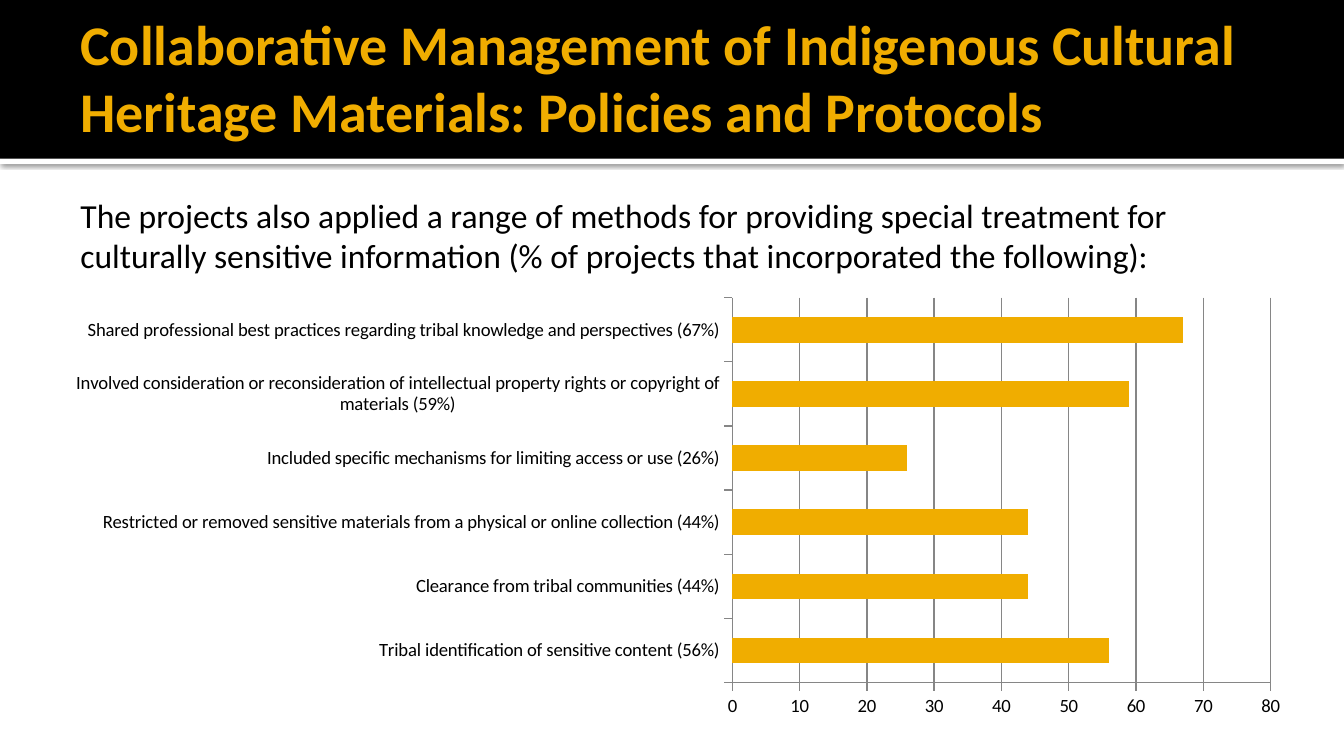
"""Builds a slide with a banner title, an introduction and a bar chart of methods."""
from lxml import etree
from pptx import Presentation
from pptx.chart.data import CategoryChartData
from pptx.dml.color import RGBColor
from pptx.enum.chart import XL_CHART_TYPE as ChartType, XL_TICK_MARK as TickMark
from pptx.enum.shapes import MSO_SHAPE as Shape
from pptx.enum.text import MSO_ANCHOR as Anchor
from pptx.oxml import parse_xml
from pptx.oxml.ns import nsdecls
from pptx.util import Inches, Pt

BLACK = RGBColor(0x00, 0x00, 0x00)
WHITE = RGBColor(0xFF, 0xFF, 0xFF)
GOLD = RGBColor(0xF0, 0xAD, 0x00)
GRAY = RGBColor(0x86, 0x86, 0x86)

TITLE = "Collaborative Management of Indigenous Cultural Heritage Materials: Policies and Protocols"
INTRODUCTION = (
    "The projects also applied a range of methods for providing special treatment for "
    "culturally sensitive information (% of projects that incorporated the following):"
)
METHODS = {
    "Tribal identification of sensitive content (56%)": 56,
    "Clearance from tribal communities (44%)": 44,
    "Restricted or removed sensitive materials from a physical or online collection (44%)": 44,
    "Included specific mechanisms for limiting access or use (26%)": 26,
    "Involved consideration or reconsideration of intellectual property rights "
    "or copyright of materials (59%)": 59,
    "Shared professional best practices regarding tribal knowledge and perspectives (67%)": 67,
}


class SlideBuilder:
    """Holds the style and the current slide."""

    font_name = "Calibri"

    def __init__(self, slide):
        self.slide = slide

    def band(self, left, top, width, height, color):
        shape = self.slide.shapes.add_shape(
            Shape.RECTANGLE, Inches(left), Inches(top), Inches(width), Inches(height))
        shape.shadow.inherit = False
        shape.fill.solid()
        shape.fill.fore_color.rgb = color
        shape.line.fill.background()
        return shape

    def drop_shadow(self, shape, blur, distance, opacity):
        effects = shape.element.spPr.find("{*}effectLst")
        shadow = parse_xml(
            f'<a:outerShdw {nsdecls("a")} blurRad="{Pt(blur)}" dist="{Pt(distance)}" '
            f'dir="5400000" algn="t" rotWithShape="0"/>')
        color = etree.SubElement(shadow, f"{{{shadow.nsmap['a']}}}srgbClr", val=str(BLACK))
        etree.SubElement(color, f"{{{shadow.nsmap['a']}}}alpha", val=str(opacity * 1000))
        effects.append(shadow)

    def text(self, left, top, width, height, words, size, color, bold=False, anchor=Anchor.TOP):
        box = self.slide.shapes.add_textbox(
            Inches(left), Inches(top), Inches(width), Inches(height))
        frame = box.text_frame
        frame.word_wrap = True
        frame.vertical_anchor = anchor
        frame.text = words
        font = frame.paragraphs[0].runs[0].font
        font.name, font.size, font.bold = self.font_name, Pt(size), bold
        font.color.rgb = color
        return frame

    def bar_chart(self, left, top, width, height, values, size, color):
        data = CategoryChartData()
        data.categories = list(values)
        data.add_series("Series 1", list(values.values()))
        chart = self.slide.shapes.add_chart(
            ChartType.BAR_CLUSTERED, Inches(left), Inches(top),
            Inches(width), Inches(height), data).chart
        chart.has_legend = chart.has_title = False
        chart.font.name, chart.font.size = self.font_name, Pt(size)
        chart.font.color.rgb = BLACK
        plot = chart.plots[0]
        plot.gap_width = 150
        plot.vary_by_categories = False
        fill = plot.series[0].format.fill
        fill.solid()
        fill.fore_color.rgb = color
        value_axis = chart.value_axis
        value_axis.has_major_gridlines = True
        for axis in (chart.category_axis, value_axis):
            axis.major_tick_mark = TickMark.OUTSIDE
        for part in (chart.category_axis, value_axis, value_axis.major_gridlines):
            part.format.line.color.rgb = GRAY


def main():
    presentation = Presentation()
    presentation.slide_width = Inches(10)
    presentation.slide_height = presentation.slide_width * 9 // 16
    builder = SlideBuilder(presentation.slides.add_slide(presentation.slide_layouts[6]))
    rule = builder.band(0, 1.18, 10, 0.04, WHITE)
    builder.drop_shadow(rule, blur=2.5, distance=0.8, opacity=60)
    builder.band(0, 0, 10, 1.18, BLACK)
    title = builder.text(0.5, 0.15, 9.5, 1.02, TITLE, 30, GOLD, bold=True, anchor=Anchor.BOTTOM)
    title.margin_top = title.margin_bottom = Inches(0.1)
    builder.text(0.5, 1.4, 9.08, 0.94, INTRODUCTION, 18, BLACK)
    builder.bar_chart(0.38, 2.15, 9.33, 3.25, METHODS, 10, GOLD)
    presentation.save("out.pptx")


if __name__ == "__main__":
    main()
